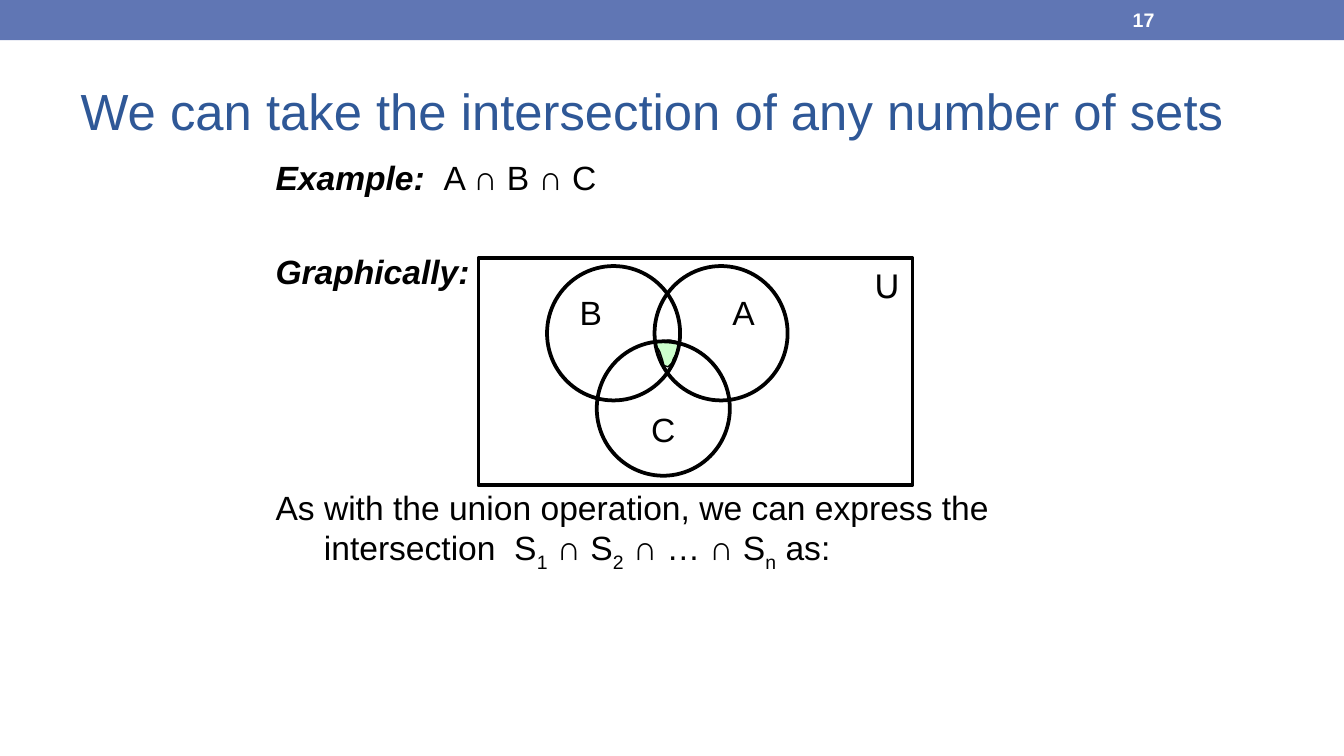
from collections import namedtuple
from dataclasses import dataclass

from lxml import etree
from pptx import Presentation
from pptx import util as u
from pptx.dml.color import RGBColor
from pptx.enum import shapes, text
from pptx.oxml import ns

Box = namedtuple("Box", "left top width height")


@dataclass(frozen=True)
class Theme:
    bar: RGBColor = RGBColor(0x60, 0x76, 0xB4)
    title: RGBColor = RGBColor(0x2F, 0x58, 0x97)
    ink: RGBColor = RGBColor(0, 0, 0)
    paper: RGBColor = RGBColor(255, 255, 255)
    overlap: RGBColor = RGBColor(0xCC, 0xFF, 0xCC)
    font: str = "Arial"
    universe_font: str = "Cabin"
    title_size: float = 27.2
    body_size: float = 18
    number_size: float = 10.5
    outline: float = 2
    thin: float = 0.75


THEME = Theme()


def inches(box):
    return [u.Inches(length) for length in box]


def set_font(font, size, color, name=THEME.font):
    font.name, font.size = name, u.Pt(size)
    font.color.rgb = color


def place(placeholder, box):
    placeholder.left, placeholder.top, placeholder.width, placeholder.height = inches(box)
    placeholder.text_frame.auto_size = text.MSO_AUTO_SIZE.NONE
    placeholder.text_frame.word_wrap = True


def add_header(slide, box, number):
    bar = slide.shapes.add_shape(shapes.MSO_SHAPE.RECTANGLE, *inches(box))
    bar.shadow.inherit = False
    bar.fill.solid()
    bar.fill.fore_color.rgb = THEME.bar
    bar.line.fill.background()

    number_box = Box(box.left + 8.33, box.top + 0.01, 1.17, 0.27)
    page = slide.shapes.add_textbox(*inches(number_box)).text_frame
    page.word_wrap = True
    page.vertical_anchor = text.MSO_ANCHOR.MIDDLE
    page.text = number
    set_font(page.paragraphs[0].font, THEME.number_size, THEME.paper)
    page.paragraphs[0].font.bold = True


def add_title(slide, box, wording):
    title = slide.shapes.title
    place(title, box)
    title.text_frame.vertical_anchor = text.MSO_ANCHOR.MIDDLE
    title.text_frame.text = wording
    heading = title.text_frame.paragraphs[0]
    heading.alignment = text.PP_ALIGN.LEFT
    heading.line_spacing = 0.9
    set_font(heading.font, THEME.title_size, THEME.title)


def add_body(slide, box, statements):
    """Each statement is (points before, [(wording, style), ...])."""
    body = slide.placeholders[1]
    place(body, box)
    frame = body.text_frame
    for index, (space_before, pieces) in enumerate(statements):
        paragraph = frame.add_paragraph() if index else frame.paragraphs[0]
        paragraph.space_before = u.Pt(space_before)
        set_font(paragraph.font, THEME.body_size, THEME.ink)
        properties = paragraph._p.get_or_add_pPr()
        properties.set("marL", str(u.Inches(0.5)))
        properties.set("indent", str(u.Inches(-0.36)))
        properties.insert_element_before(
            etree.Element(ns.qn("a:buNone")), "a:tabLst", "a:defRPr", "a:extLst")
        for wording, style in pieces:
            run = paragraph.add_run()
            run.text = wording
            if style == "label":
                run.font.bold = run.font.italic = True
            elif style == "subscript":
                run.font._element.set("baseline", "-25000")


def add_set(group, kind, box, label, alignment, anchor, font=THEME.font):
    outline = group.shapes.add_shape(kind, *inches(box))
    outline.shadow.inherit = False
    outline.fill.background()
    outline.line.color.rgb = THEME.ink
    outline.line.width = u.Pt(THEME.outline)
    outline.text_frame.vertical_anchor = anchor
    outline.text_frame.text = label
    name = outline.text_frame.paragraphs[0]
    name.alignment = alignment
    set_font(name.font, THEME.body_size, THEME.ink, font)


def add_overlap(group, left, top):
    corners = [(0.03, 0.04), (0.02, 0.06), (0.05, 0.1), (0.06, 0.12), (0.08, 0.18),
               (0.09, 0.22), (0.12, 0.23), (0.15, 0.2), (0.16, 0.17), (0.19, 0.12),
               (0.2, 0.08), (0.18, 0.04), (0.13, 0.03)]
    points = [(u.Inches(left + x), u.Inches(top + y)) for x, y in corners]
    builder = group.shapes.build_freeform(*points[0])
    builder.add_line_segments(points[1:], close=True)
    overlap = builder.convert_to_shape()
    overlap.shadow.inherit = False
    overlap.fill.solid()
    overlap.fill.fore_color.rgb = THEME.overlap
    overlap.line.color.rgb = THEME.ink
    overlap.line.width = u.Pt(THEME.thin)


def add_venn(slide, box):
    align, anchor = text.PP_ALIGN, text.MSO_ANCHOR
    group = slide.shapes.add_group_shape()
    add_set(group, shapes.MSO_SHAPE.RECTANGLE, box, "U", align.RIGHT, anchor.TOP,
            THEME.universe_font)
    add_overlap(group, box.left + 1.29, box.top + 0.58)
    for label, x, y, alignment, position in [
        ("B", 0.51, 0.06, align.LEFT, anchor.TOP),
        ("A", 1.31, 0.06, align.RIGHT, anchor.TOP),
        ("C", 0.88, 0.62, align.CENTER, anchor.BOTTOM),
    ]:
        circle = Box(box.left + x, box.top + y, 0.99, 1)
        add_set(group, shapes.MSO_SHAPE.OVAL, circle, label, alignment, position)


def main():
    deck = Presentation()
    deck.slide_width, deck.slide_height = u.Inches(10), u.Inches(10 * 9 / 16)
    slide = deck.slides.add_slide(deck.slide_layouts[1])
    add_header(slide, Box(0, 0, 10, 0.3), "17")
    add_title(slide, Box(0.5, 0.44, 9, 0.81),
              "We can take the intersection of any number of sets")
    add_body(slide, Box(1.81, 1.12, 6.81, 3.88), [
        (4, [("Example:  ", "label"), ("A ∩ B ∩ C", "plain")]),
        (28.5, [("Graphically:", "label")]),
        (105, [
            ("As with the union operation, we can express the intersection  S", "plain"),
            ("1", "subscript"), (" ∩ S", "plain"),
            ("2", "subscript"), (" ∩ … ∩ S", "plain"),
            ("n", "subscript"), (" as:", "plain"),
        ]),
    ])
    add_venn(slide, Box(3.56, 1.92, 3.23, 1.69))
    deck.save("out.pptx")


if __name__ == "__main__":
    main()
